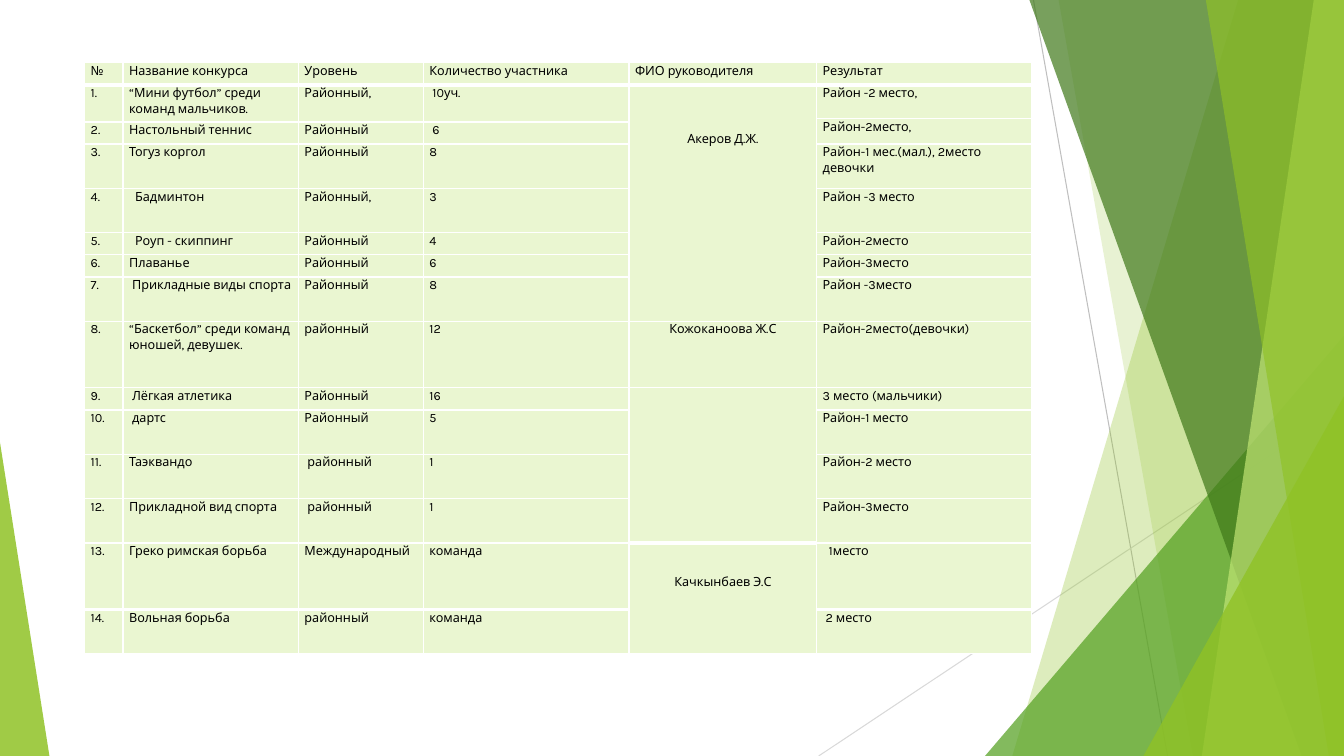
from lxml import etree
from pptx import Presentation
from pptx.dml.color import RGBColor
from pptx.enum.shapes import MSO_CONNECTOR, MSO_SHAPE
from pptx.enum.text import PP_ALIGN
from pptx.oxml.ns import qn
from pptx.util import Inches, Pt

LINE = MSO_CONNECTOR.STRAIGHT
TRI = MSO_SHAPE.ISOSCELES_TRIANGLE
LEFT, MID = PP_ALIGN.LEFT, PP_ALIGN.CENTER

WHITE = RGBColor(0xFF, 0xFF, 0xFF)
BLACK = RGBColor(0, 0, 0)
PALE = RGBColor(0xEA, 0xF6, 0xD1)
LIME = RGBColor(0x90, 0xC2, 0x26)
LIGHT = RGBColor(0xC0, 0xE4, 0x74)
GREEN = RGBColor(0x54, 0xA0, 0x21)
DARK = RGBColor(0x3F, 0x78, 0x19)
GREY = RGBColor(0xBF, 0xBF, 0xBF)
SILVER = RGBColor(0xD9, 0xD9, 0xD9)

WIDE, HIGH = 13.33, 7.5
COLS = [0.38, 1.74, 1.24, 2.04, 1.86, 2.13]
ROWS = [0.22, 0.34, 0.03, 0.22, 0.44, 0.44, 0.22, 0.22,
        0.44, 0.66, 0.22, 0.44, 0.44, 0.44, 0.66, 0.44]
HEAD = ["№", "Название конкурса", "Уровень", "Количество участника",
        "ФИО руководителя", "Результат"]
# A leading space stands for one step of indent.
EVENTS = [
    ("“Мини футбол” среди команд мальчиков.", "Районный,", " 10уч.", "Район -2 место,"),
    ("Настольный теннис", "Районный", " 6", "Район-2место,"),
    ("Тогуз коргол", "Районный", "8", "Район-1 мес.(мал.), 2место девочки"),
    ("  Бадминтон", "Районный,", "3", "Район -3 место"),
    ("  Роуп - скиппинг", "Районный", "4", "Район-2место"),
    ("Плаванье", "Районный", "6", "Район-3место"),
    (" Прикладные виды спорта", "Районный", "8", "Район -3место"),
    ("“Баскетбол” среди команд юношей, девушек.", "районный", "12",
     "Район-2место(девочки)"),
    (" Лёгкая атлетика", "Районный", "16", "3 место (мальчики)"),
    (" дартс", "Районный", "5", "Район-1 место"),
    ("Таэквандо", " районный", "1", "Район-2 место"),
    ("Прикладной вид спорта", " районный", "1", "Район-3место"),
    ("Греко римская борьба", "Международный", "команда", "  1место"),
    ("Вольная борьба", "районный", "команда", " 2 место"),
]
# Grid row: name and its distance from the top of the cell
COACHES = {1: ("Акеров Д.Ж.", 0.46), 9: ("Кожоканоова Ж.С", 0),
           14: ("Качкынбаев Э.С", 0.31)}
SPANS = [(1, 2, col) for col in range(4)]
SPANS += [(1, 8, 4), (10, 13, 4), (14, 15, 4), (2, 3, 5)]


class Deck:
    font = {"name": "Karla", "size": Pt(9)}

    def __init__(self):
        self.prs = Presentation()
        self.prs.slide_width = Inches(WIDE)
        self.prs.slide_height = Inches(HIGH)
        self.slide = self.prs.slides.add_slide(self.prs.slide_layouts[6])
        self.shapes = self.slide.shapes

    def line(self, x1, y1, x2, y2, color):
        line = self.shapes.add_connector(LINE, *map(Inches, (x1, y1, x2, y2)))
        line.line.color.rgb = color
        line.line.width = Pt(0.75)
        etree.SubElement(line._element.spPr, qn("a:effectLst"))

    def paint(self, shape, color, alpha):
        """Fill a shape without outline; alpha is its opacity in percent."""
        shape.shadow.inherit = False
        shape.line.fill.background()
        shape.fill.solid()
        shape.fill.fore_color.rgb = color
        tint = shape._element.spPr.find(".//" + qn("a:srgbClr"))
        etree.SubElement(tint, qn("a:alpha"), val=str(alpha * 1000))

    def band(self, top, foot, color, alpha):
        """Draw a slanted band that reaches the right edge of the slide."""
        pen = self.shapes.build_freeform(Inches(top), 0)
        pen.add_line_segments([(Inches(x), Inches(y)) for x, y in
                               ((WIDE, 0), (WIDE, HIGH), (foot, HIGH))])
        self.paint(pen.convert_to_shape(), color, alpha)

    def wedge(self, x, y, wide, tip, color, alpha):
        """Draw a triangle standing on the bottom edge; tip is 0 left, 1 right."""
        shape = self.shapes.add_shape(
            TRI, *map(Inches, (x, y, wide, HIGH - y)))
        shape.adjustments[0] = tip
        self.paint(shape, color, alpha)

    def border(self, cell, top, foot):
        props = cell._tc.get_or_add_tcPr()
        for side, width in (("L", 1), ("R", 1), ("T", top), ("B", foot)):
            edge = etree.SubElement(props, qn("a:ln" + side), w=str(Pt(width)))
            fill = etree.SubElement(edge, qn("a:solidFill"))
            etree.SubElement(fill, qn("a:srgbClr"), val=str(WHITE))

    def label(self, cell, text, drop=0, align=LEFT):
        words = text.lstrip()
        pad = 0.06 + 0.03 * (len(text) - len(words))
        edges = {"left": pad, "right": 0.06, "top": drop, "bottom": 0}
        for side, size in edges.items():
            setattr(cell, "margin_" + side, Inches(size))
        par = cell.text_frame.paragraphs[0]
        par.alignment = align
        par.line_spacing = 1.07
        run = par.add_run()
        run.text = words
        for key, value in self.font.items():
            setattr(run.font, key, value)
        run.font.color.rgb = BLACK

    def table(self, x, y):
        frame = self.shapes.add_table(
            len(ROWS), len(COLS), *map(Inches, (x, y, sum(COLS), sum(ROWS))))
        grid = frame.table
        grid.first_row = grid.horz_banding = False
        for col, size in zip(grid.columns, COLS):
            col.width = Inches(size)
        for row, size in zip(grid.rows, ROWS):
            row.height = Inches(size)
        for first, last, col in SPANS:
            grid.cell(first, col).merge(grid.cell(last, col))

        texts = {(0, col): (text,) for col, text in enumerate(HEAD)}
        for num, (name, level, count, result) in enumerate(EVENTS, 1):
            row = num if num == 1 else num + 1
            for col, text in enumerate((f"{num}.", name, level, count)):
                texts[row, col] = (text,)
            texts[2 if num == 2 else row, 5] = (result,)
        for row, (name, drop) in COACHES.items():
            texts[row, 4] = (name, drop, MID)

        for row in range(len(ROWS)):
            for col in range(len(COLS)):
                cell = grid.cell(row, col)
                thick = {1, 14} if col == 4 else {1, 15}
                self.border(cell, 3 if row in thick else 1,
                            3 if row + 1 in thick else 1)
                cell.fill.solid()
                cell.fill.fore_color.rgb = PALE
                self.label(cell, *texts.get((row, col), ("",)))


def main():
    deck = Deck()
    deck.line(10.25, 0, 11.58, HIGH, GREY)
    deck.line(WIDE, 4.03, 8.12, HIGH, SILVER)
    deck.band(12.28, 10.04, LIME, 30)
    deck.band(10.5, 11.83, LIME, 20)
    deck.wedge(9.77, 3.33, 3.56, 1, GREEN, 72)
    deck.band(10.21, 12.91, DARK, 70)
    deck.band(13.03, 11.92, LIGHT, 70)
    deck.band(11.96, 13.18, LIME, 65)
    deck.wedge(11.34, 3.93, 1.99, 1, LIME, 80)
    deck.wedge(0, 4.39, 0.49, 0, LIME, 85)
    deck.table(0.84, 0.62)
    deck.prs.save("out.pptx")


if __name__ == "__main__":
    main()
